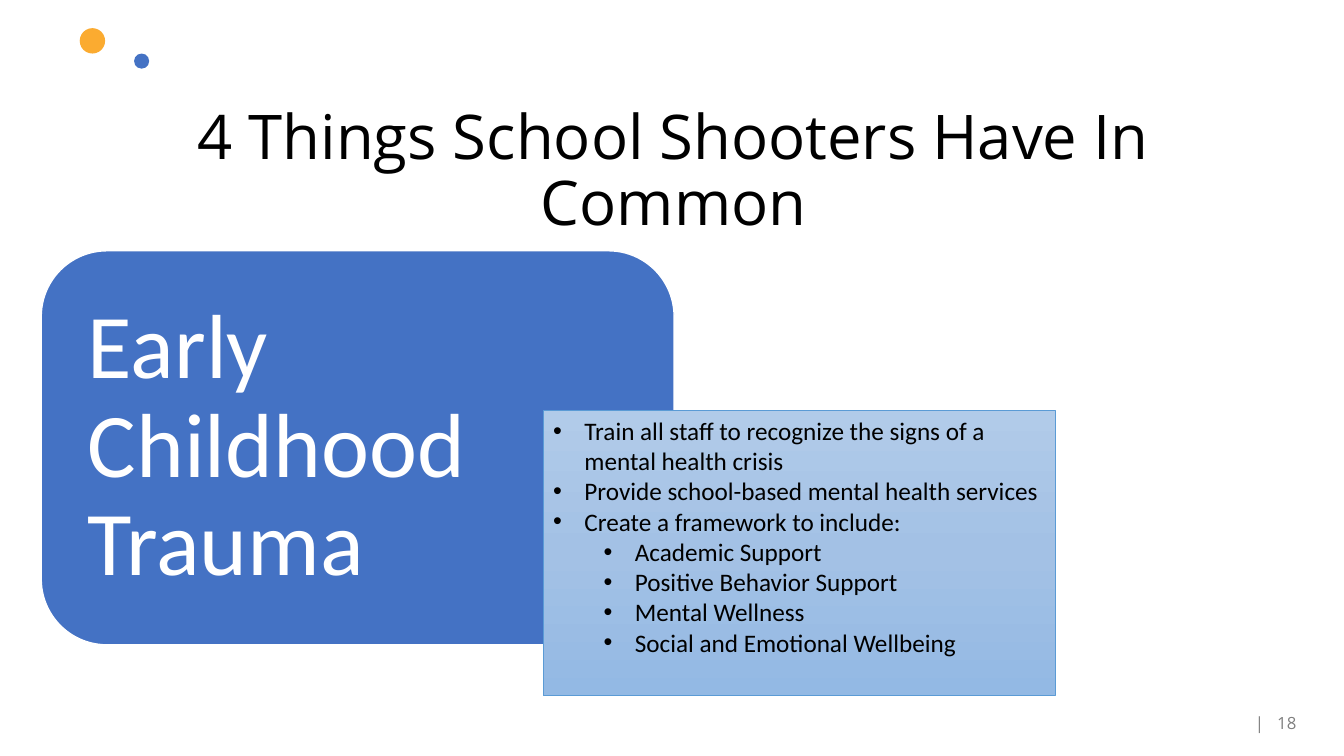
from dataclasses import dataclass
from typing import Optional

from lxml import etree
from pptx import Presentation
from pptx import util as u
from pptx.dml.color import RGBColor
from pptx.enum import shapes, text
from pptx.oxml import ns, parse_xml


@dataclass(frozen=True)
class Theme:
    white: str = "FFFFFF"
    black: str = "000000"
    grey: str = "808080"
    blue: str = "4472C4"
    orange: str = "FBAB30"
    panel_line: str = "5B9BD5"
    panel_stops: tuple = ((0, "B1CBE9"), (50, "A3C1E5"), (100, "93B9E4"))
    heading_font: str = "Open Sans"
    body_font: str = "Calibri"
    title_size: float = 44
    card_size: float = 65
    body_size: float = 18
    number_size: float = 12


@dataclass(frozen=True)
class Box:
    """Position and size in centimetres."""
    left: float
    top: float
    width: float
    height: float

    def lengths(self) -> list:
        return [u.Cm(n) for n in (self.left, self.top, self.width, self.height)]


@dataclass(frozen=True)
class Dot:
    left: float
    top: float
    diameter: float
    color: str


@dataclass(frozen=True)
class Bullet:
    wording: str
    level: int = 0


THEME = Theme()
DOTS = (Dot(3.38, 1.35, 0.38, THEME.blue), Dot(2.01, 0.71, 0.64, THEME.orange))
BULLETS = (
    Bullet("Train all staff to recognize the signs of a mental health crisis"),
    Bullet("Provide school-based mental health services"),
    Bullet("Create a framework to include:"),
    Bullet("Academic Support", 1),
    Bullet("Positive Behavior Support", 1),
    Bullet("Mental Wellness", 1),
    Bullet("Social and Emotional Wellbeing", 1),
)
HANGING = 0.79
LEVEL_STEP = 1.27


def style_font(font, name: str, size: float, color: str) -> None:
    font.name = name
    font.size = u.Pt(size)
    font.color.rgb = RGBColor.from_string(color)


def add_shape(slide, kind, box: Box, fill: Optional[str] = None,
              line: Optional[str] = None, line_width: float = 1):
    shape = slide.shapes.add_shape(kind, *box.lengths())
    shape.shadow.inherit = False
    if fill:
        shape.fill.solid()
        shape.fill.fore_color.rgb = RGBColor.from_string(fill)
    if line:
        shape.line.color.rgb = RGBColor.from_string(line)
        shape.line.width = u.Pt(line_width)
    else:
        shape.line.fill.background()
    return shape


def write_line(shape, wording: str, alignment, font: str, size: float, color: str):
    """Fill the shape with one vertically centred paragraph."""
    frame = shape.text_frame
    frame.word_wrap = True
    frame.vertical_anchor = text.MSO_ANCHOR.MIDDLE
    frame.text = wording
    paragraph = frame.paragraphs[0]
    paragraph.alignment = alignment
    style_font(paragraph.runs[0].font, font, size, color)
    return paragraph


def add_title(slide) -> None:
    box = slide.shapes.add_textbox(*Box(2.72, 2.51, 28.52, 3.68).lengths())
    paragraph = write_line(box, "4 Things School Shooters Have In Common", text.PP_ALIGN.CENTER,
                           THEME.heading_font, THEME.title_size, THEME.black)
    paragraph.line_spacing = 0.9


def add_slide_number(slide) -> None:
    box = slide.shapes.add_textbox(*Box(25.3, 17.7, 7.62, 1.02).lengths())
    paragraph = write_line(box, "| ", text.PP_ALIGN.RIGHT,
                           THEME.heading_font, THEME.number_size, THEME.grey)
    # Wider letter spacing sets the gap between bar and number.
    paragraph.runs[0].font._element.set("spc", "310")
    number = paragraph.add_run()
    number.text = "18"
    style_font(number.font, THEME.heading_font, THEME.number_size, THEME.grey)


def add_topic_card(slide) -> None:
    card = add_shape(slide, shapes.MSO_SHAPE.ROUNDED_RECTANGLE,
                     Box(1.04, 6.32, 15.95, 9.93), THEME.blue, THEME.white)
    frame = card.text_frame
    frame.margin_left = frame.margin_right = u.Cm(0.69)
    frame.margin_top = frame.margin_bottom = u.Cm(0.69)
    paragraph = write_line(card, "Early Childhood Trauma", text.PP_ALIGN.LEFT,
                           THEME.body_font, THEME.card_size, THEME.white)
    paragraph.line_spacing = 0.9


def set_vertical_gradient(shape, stops: tuple) -> None:
    stop_xml = "".join(
        f'<a:gs pos="{position * 1000}"><a:srgbClr val="{color}"/></a:gs>'
        for position, color in stops)
    gradient = parse_xml(
        f'<a:gradFill {ns.nsdecls("a")} rotWithShape="1"><a:gsLst>{stop_xml}</a:gsLst>'
        '<a:lin ang="5400000" scaled="0"/></a:gradFill>')
    shape._element.spPr.find(ns.qn("a:prstGeom")).addnext(gradient)


def set_bullet(paragraph, level: int) -> None:
    paragraph.level = level
    properties = paragraph._p.get_or_add_pPr()
    properties.set("marL", str(u.Cm(HANGING + level * LEVEL_STEP)))
    properties.set("indent", str(-u.Cm(HANGING)))
    etree.SubElement(properties, ns.qn("a:buFont")).set("typeface", "Arial")
    etree.SubElement(properties, ns.qn("a:buChar")).set("char", "•")


def add_action_panel(slide) -> None:
    panel = add_shape(slide, shapes.MSO_SHAPE.RECTANGLE, Box(13.69, 10.34, 12.9, 7.19),
                      line=THEME.panel_line, line_width=0.5)
    set_vertical_gradient(panel, THEME.panel_stops)
    frame = panel.text_frame
    frame.word_wrap = True
    frame.vertical_anchor = text.MSO_ANCHOR.TOP
    frame.text = "\n".join(bullet.wording for bullet in BULLETS)
    for paragraph, bullet in zip(frame.paragraphs, BULLETS):
        paragraph.alignment = text.PP_ALIGN.LEFT
        set_bullet(paragraph, bullet.level)
        style_font(paragraph.runs[0].font, THEME.body_font, THEME.body_size, THEME.black)


def main() -> None:
    presentation = Presentation()
    presentation.slide_width = u.Cm(33.87)
    presentation.slide_height = u.Cm(19.05)
    slide = presentation.slides.add_slide(presentation.slide_layouts[6])
    add_slide_number(slide)
    for dot in DOTS:
        add_shape(slide, shapes.MSO_SHAPE.OVAL,
                  Box(dot.left, dot.top, dot.diameter, dot.diameter), dot.color)
    add_title(slide)
    add_topic_card(slide)
    add_action_panel(slide)
    presentation.save("out.pptx")


if __name__ == "__main__":
    main()
